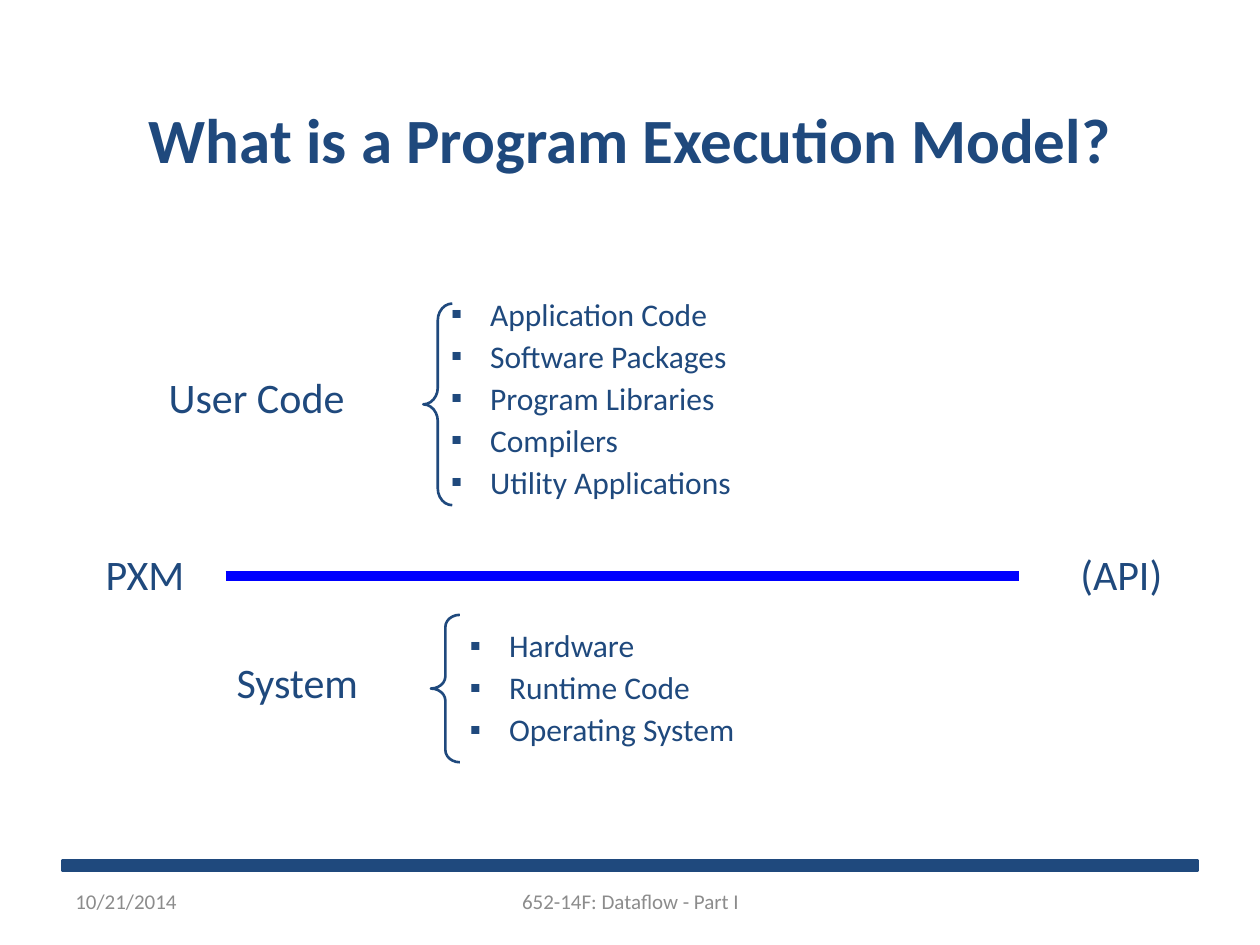
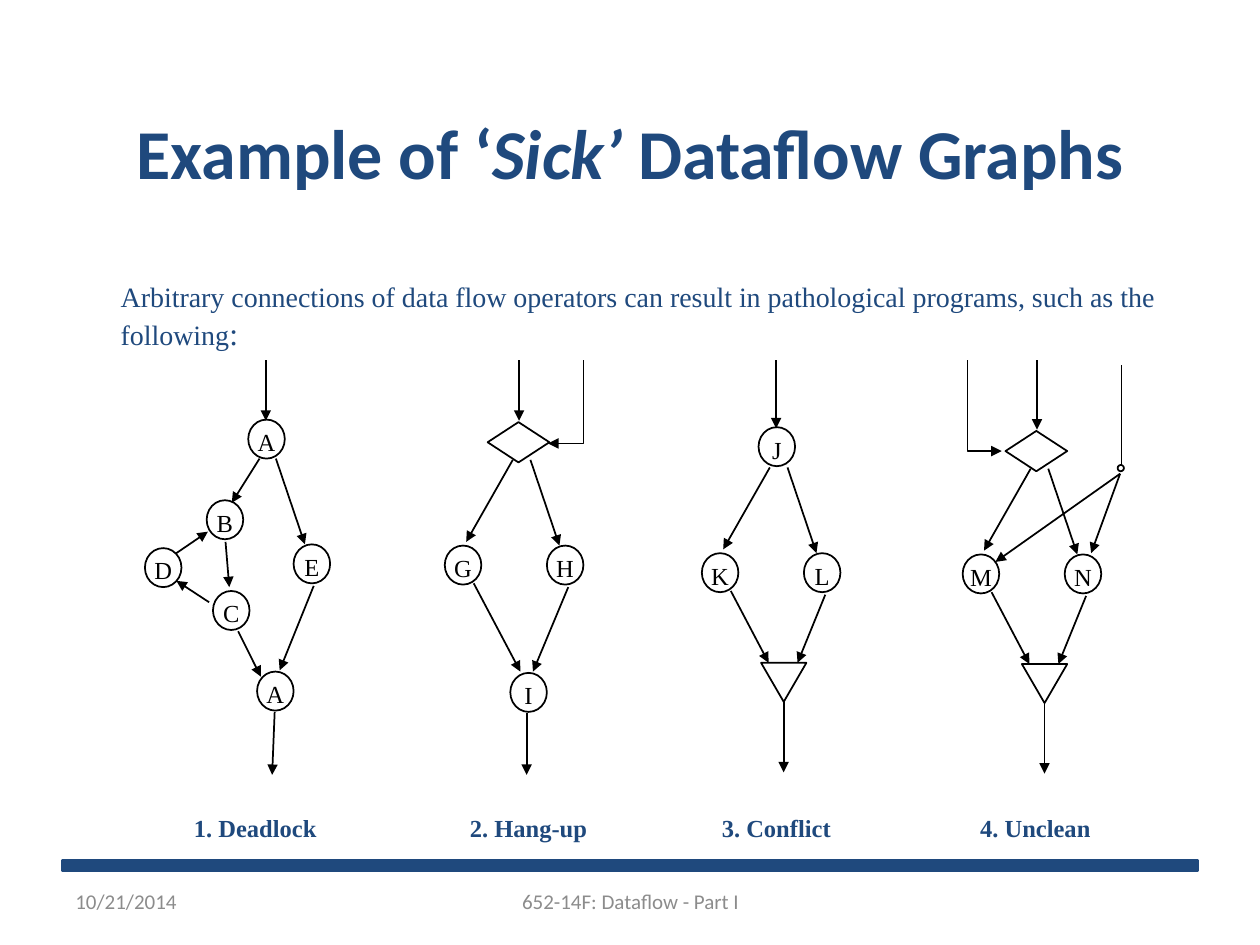
from dataclasses import dataclass

from lxml import etree
from pptx import Presentation
from pptx.dml.color import RGBColor
from pptx.enum.shapes import MSO_CONNECTOR, MSO_SHAPE
from pptx.enum.text import MSO_ANCHOR, MSO_AUTO_SIZE, PP_ALIGN
from pptx.oxml.ns import qn
from pptx.util import Pt

STRAIGHT = MSO_CONNECTOR.STRAIGHT
RECTANGLE = MSO_SHAPE.RECTANGLE
CIRCLE = MSO_SHAPE.OVAL
DIAMOND = MSO_SHAPE.DIAMOND
TRIANGLE = MSO_SHAPE.ISOSCELES_TRIANGLE
BRACE = MSO_SHAPE.LEFT_BRACE
TOP, MIDDLE = MSO_ANCHOR.TOP, MSO_ANCHOR.MIDDLE
LEFT, CENTER = PP_ALIGN.LEFT, PP_ALIGN.CENTER
NO_FIT = MSO_AUTO_SIZE.NONE

PX = 9144  # EMU in one px, 100 px to the inch
LAYOUT_TWO_LISTS, LAYOUT_TITLE_ONLY = 3, 5


@dataclass(frozen=True)
class Theme:
    navy: str = "1F497D"
    blue: str = "0000FF"
    black: str = "000000"
    grey: str = "8C8C8C"
    sans: str = "Calibri"
    serif: str = "Times New Roman"
    title_size: int = 36
    large_title_size: int = 40
    label_size: int = 24
    list_size: int = 18
    intro_size: int = 16
    graph_size: int = 14
    footer_size: int = 12


class Canvas:
    """Draws elements on the current slide in the theme's style."""

    def __init__(self, presentation, theme):
        self.presentation = presentation
        self.theme = theme
        self.slide = None

    def new_slide(self, layout):
        self.slide = self.presentation.slides.add_slide(
            self.presentation.slide_layouts[layout])
        self.shape(RECTANGLE, 50, 683, 900, 8, self.theme.navy, 2, fill=self.theme.navy)
        footer = {"size": self.theme.footer_size, "color": self.theme.grey}
        self.text("10/21/2014", 50, 695, 233, 40, anchor=MIDDLE, **footer)
        self.text("652-14F: Dataflow - Part I", 342, 695, 317, 40,
                  align=CENTER, anchor=MIDDLE, **footer)

    def place(self, shape, x, y, width, height):
        shape.left, shape.top = x * PX, y * PX
        shape.width, shape.height = width * PX, height * PX

    def run(self, paragraph, text, size, font=None, color=None, bold=False, italic=False):
        run = paragraph.add_run()
        run.text = text
        run.font.name = font or self.theme.sans
        run.font.size = Pt(size)
        run.font.bold, run.font.italic = bold, italic
        run.font.color.rgb = RGBColor.from_string(color or self.theme.navy)

    def title(self, parts, y, height, size, spacing=1.0):
        """Fill the title with (text, italic) parts."""
        title = self.slide.shapes.title
        self.place(title, 0, y, 1000, height)
        title.text_frame.auto_size = NO_FIT
        title.text_frame.vertical_anchor = MIDDLE
        paragraph = title.text_frame.paragraphs[0]
        paragraph.alignment, paragraph.line_spacing = CENTER, spacing
        for text, italic in parts:
            self.run(paragraph, text, size, bold=True, italic=italic)

    def text(self, text, x, y, width, height, size, align=LEFT, anchor=TOP,
             spacing=1.0, **style):
        box = self.slide.shapes.add_textbox(0, 0, 0, 0)
        self.place(box, x, y, width, height)
        frame = box.text_frame
        frame.word_wrap, frame.vertical_anchor = True, anchor
        paragraph = frame.paragraphs[0]
        paragraph.alignment, paragraph.line_spacing = align, spacing
        self.run(paragraph, text, size, **style)
        return paragraph

    def label(self, text, x, y, width, align=LEFT):
        self.text(text, x, y, width, 43, self.theme.label_size, align, spacing=0.8)

    def tab_stops(self, paragraph, stops):
        properties = paragraph._p.get_or_add_pPr()
        tabs = etree.SubElement(properties, qn("a:tabLst"))
        for stop in stops:
            etree.SubElement(tabs, qn("a:tab"), pos=str(stop * PX), algn="l")

    def bullet(self, paragraph, hanging):
        properties = paragraph._p.get_or_add_pPr()
        properties.set("marL", str(hanging * PX))
        properties.set("indent", str(-hanging * PX))
        color = etree.SubElement(properties, qn("a:buClr"))
        etree.SubElement(color, qn("a:srgbClr"), val=self.theme.navy)
        etree.SubElement(properties, qn("a:buFont"), typeface=self.theme.sans)
        etree.SubElement(properties, qn("a:buChar"), char="▪")

    def bullet_list(self, placeholder_index, items, x, y, height):
        body = self.slide.placeholders[placeholder_index]
        self.place(body, x, y, 310, height)
        frame = body.text_frame
        frame.auto_size, frame.vertical_anchor = NO_FIT, TOP
        frame.margin_left = frame.margin_right = frame.margin_top = frame.margin_bottom = 0
        for index, item in enumerate(items):
            paragraph = frame.add_paragraph() if index else frame.paragraphs[0]
            self.bullet(paragraph, hanging=31)
            paragraph.line_spacing = Pt(16)
            paragraph.space_before = Pt(8 if index else 0)
            self.run(paragraph, item, self.theme.list_size)

    def outline(self, shape, color, weight, fill=None):
        shape.shadow.inherit = False
        if fill:
            shape.fill.solid()
            shape.fill.fore_color.rgb = RGBColor.from_string(fill)
        else:
            shape.fill.background()
        shape.line.color.rgb = RGBColor.from_string(color)
        shape.line.width = Pt(weight)

    def shape(self, kind, x, y, width, height, color=None, weight=1, fill=None):
        shape = self.slide.shapes.add_shape(kind, 0, 0, 0, 0)
        self.place(shape, x, y, width, height)
        self.outline(shape, color or self.theme.black, weight, fill)
        return shape

    def brace(self, x, y, height, curve):
        brace = self.shape(BRACE, x, y, 23, height, self.theme.navy, 1.5)
        brace.adjustments[0] = curve

    def node(self, letter, x, y):
        frame = self.shape(CIRCLE, x, y, 29, 31).text_frame
        frame.word_wrap, frame.vertical_anchor = False, MIDDLE
        frame.margin_left = frame.margin_right = frame.margin_bottom = 0
        frame.margin_top = 4 * PX
        paragraph = frame.paragraphs[0]
        paragraph.alignment = CENTER
        self.run(paragraph, letter, self.theme.graph_size, self.theme.serif, self.theme.black)

    def arrowhead(self, line):
        etree.SubElement(line.line._get_or_add_ln(), qn("a:tailEnd"), type="triangle")

    def line(self, x1, y1, x2, y2, color=None, weight=1):
        line = self.slide.shapes.add_connector(STRAIGHT, x1 * PX, y1 * PX, x2 * PX, y2 * PX)
        line.line.color.rgb = RGBColor.from_string(color or self.theme.black)
        line.line.width = Pt(weight)
        etree.SubElement(line._element.spPr, qn("a:effectLst"))
        return line

    def arrow(self, x1, y1, x2, y2):
        self.arrowhead(self.line(x1, y1, x2, y2))

    def bent_arrow(self, start, *points):
        builder = self.slide.shapes.build_freeform(*start, scale=PX)
        builder.add_line_segments(points, close=False)
        shape = builder.convert_to_shape()
        self.outline(shape, self.theme.black, 1)
        self.arrowhead(shape)


def draw_execution_model(canvas):
    theme = canvas.theme
    canvas.new_slide(LAYOUT_TWO_LISTS)
    canvas.title([("What is a Program Execution Model?", False)], 67, 92,
                 theme.title_size, spacing=0.93)

    # User code above the interface
    canvas.label("User Code", 124, 298, 200)
    canvas.brace(336, 241, 160, 0.58)
    canvas.bullet_list(1, ["Application Code", "Software Packages", "Program Libraries",
                           "Compilers", "Utility Applications"], 358, 242, 160)

    # The interface itself
    canvas.label("PXM", 74, 438, 100)
    canvas.line(179, 457, 809, 457, theme.blue, 6)
    canvas.label("(API)", 823, 438, 134, CENTER)

    # System below the interface
    canvas.label("System", 178, 524, 150)
    canvas.brace(342, 488, 117, 0.42)
    canvas.bullet_list(2, ["Hardware", "Runtime Code", "Operating System"], 373, 505, 94)


def draw_deadlock(canvas):
    for letter, x, y in [("A", 197, 333), ("B", 164, 397), ("D", 115, 435),
                         ("C", 169, 469), ("E", 233, 432), ("A", 204, 533)]:
        canvas.node(letter, x, y)
    for ends in [(211, 286, 211, 334), (206, 364, 184, 399), (219, 364, 242, 432),
                 (179, 430, 182, 466), (140, 439, 165, 422), (166, 478, 140, 461),
                 (189, 501, 207, 537), (249, 465, 222, 532), (218, 565, 216, 615)]:
        canvas.arrow(*ends)


def draw_fork(canvas, x, y, left, right, source=None, sink=None):
    """Draw a fork and join; x, y is the corner of the left node.

    Without a source letter the fork starts at a diamond, and without
    a sink letter the branches join at a triangle.
    """
    canvas.node(left, x, y)
    canvas.node(right, x + 81, y)
    if source:
        canvas.node(source, x + 45, y - 100)
    else:
        canvas.shape(DIAMOND, x + 34, y - 98, 49, 32)
    if sink:
        canvas.node(sink, x + 52, y + 101)
        join_left, join_right, join_top, exit_top, exit_end = 60, 70, 100, 133, 182
    else:
        canvas.shape(TRIANGLE, x + 47, y + 87, 36, 31).rotation = 180
        join_left, join_right, join_top, exit_top, exit_end = 53, 76, 87, 118, 174
    canvas.arrow(x + 59, 286, x + 59, y - 99)
    for x1, y1, x2, y2 in [(54, -68, 17, -3), (68, -68, 91, 0),
                           (23, 30, join_left, join_top), (98, 33, join_right, join_top),
                           (65, exit_top, 65, exit_end)]:
        canvas.arrow(x + x1, y + y1, x + x2, y + y2)


def draw_sick_graphs(canvas):
    theme = canvas.theme
    canvas.new_slide(LAYOUT_TITLE_ONLY)
    canvas.title([("Example of ‘", False), ("Sick’", True), (" Dataflow Graphs", False)],
                 58, 125, theme.large_title_size)
    intro = canvas.text("Arbitrary connections of data flow operators can result in "
                        "pathological programs, such as the following",
                        86, 188, 850, 125, theme.intro_size, anchor=MIDDLE, font=theme.serif)
    canvas.run(intro, ":", theme.list_size, theme.serif)

    draw_deadlock(canvas)

    # Hang-up
    draw_fork(canvas, 353, 433, "G", "H", sink="I")
    canvas.bent_arrow((463, 286), (463, 352), (435, 352))

    # Conflict
    draw_fork(canvas, 557, 439, "K", "L", source="J")

    # Unclean, with an input shared by both branches
    draw_fork(canvas, 764, 440, "M", "N")
    canvas.bent_arrow((768, 286), (768, 358), (795, 358))
    canvas.line(890, 290, 890, 369)
    canvas.shape(CIRCLE, 887, 369, 5, 5)
    canvas.arrow(889, 376, 866, 439)
    canvas.arrow(889, 376, 790, 446)

    # Captions
    captions = canvas.text("1. Deadlock\t2. Hang-up\t3. Conflict\t4. Unclean",
                           144, 640, 736, 33, theme.graph_size, font=theme.serif, bold=True)
    canvas.tab_stops(captions, [219, 419, 624])


def main():
    presentation = Presentation()
    presentation.slide_width, presentation.slide_height = 1000 * PX, 750 * PX
    canvas = Canvas(presentation, Theme())
    draw_execution_model(canvas)
    draw_sick_graphs(canvas)
    presentation.save("out.pptx")


if __name__ == "__main__":
    main()
